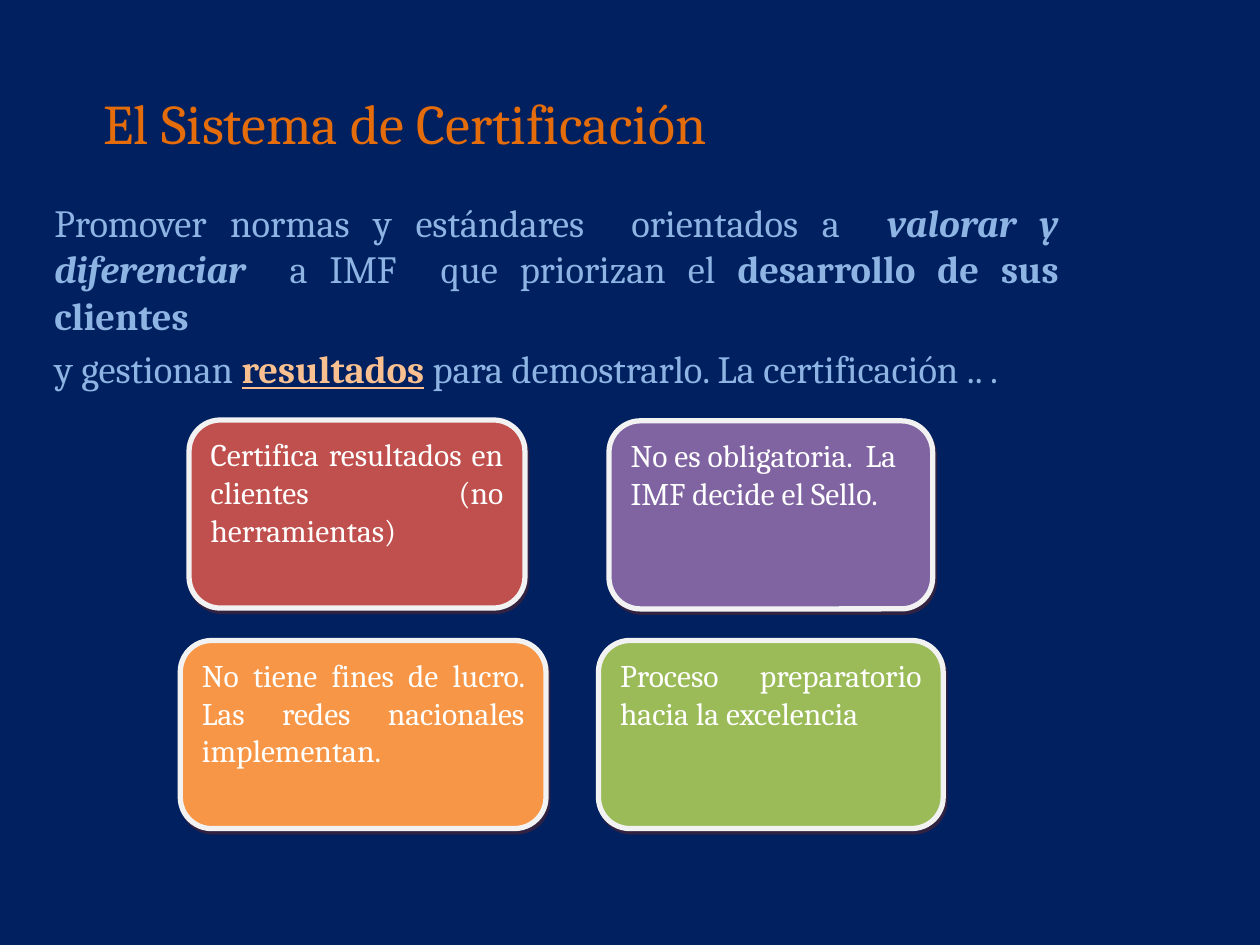
from lxml import etree
from pptx import Presentation
from pptx.dml.color import RGBColor
from pptx.enum import shapes, text
from pptx.oxml import ns
from pptx.util import Pt

FONT = "Cambria"
BLUE, PEACH, WHITE = "8EB4E3", "FAC090", "FFFFFF"
TITLE = [[("El Sistema de Certificación", "E46C0A", "")]]
BODY = [
    [("Promover normas y estándares  orientados a  ", BLUE, ""),
     ("valorar y diferenciar ", BLUE, "bi"),
     (" a IMF  que priorizan el ", BLUE, ""),
     ("desarrollo de sus clientes", BLUE, "b")],
    [("y gestionan ", BLUE, ""),
     ("resultados", PEACH, "bu"),
     (" para demostrarlo. La certificación .. .", BLUE, "")],
]
LEFT, JUST = text.PP_ALIGN.LEFT, text.PP_ALIGN.JUSTIFY
CARDS = [
    ("Certifica resultados en clientes (no herramientas)", "C0504D", JUST, 108, 240, 192),
    ("No es obligatoria.  La IMF decide el Sello.", "8064A2", LEFT, 348, 240.5, 185),
    ("Proceso preparatorio hacia la excelencia", "9BBB59", JUST, 342, 366, 197),
    ("No tiene fines de lucro. Las redes nacionales implementan.", "F79646", JUST, 103, 366, 209),
]
TALL = 107.5


def rgb(code):
    return RGBColor.from_string(code)


def style(run, size, color, marks=""):
    font = run.font
    font.name, font.size = FONT, Pt(size)
    font.color.rgb = rgb(color)
    font.bold, font.italic, font.underline = "b" in marks, "i" in marks, "u" in marks


def write(slide, paras, box, size, align):
    frame = slide.shapes.add_textbox(*map(Pt, box)).text_frame
    frame.word_wrap = True
    frame.vertical_anchor = text.MSO_ANCHOR.BOTTOM
    frame.margin_top = frame.margin_bottom = Pt(7.2)
    for i, parts in enumerate(paras):
        para = frame.add_paragraph() if i else frame.paragraphs[0]
        para.alignment = align
        para.space_before = Pt(size * 0.2)
        for words, color, marks in parts:
            run = para.add_run()
            run.text = words
            style(run, size, color, marks)


def shade(shape):
    shape.shadow.inherit = False
    effects = shape._element.spPr.find(ns.qn("a:effectLst"))
    outer = etree.SubElement(effects, ns.qn("a:outerShdw"), dist=str(Pt(2.2)),
                             dir=str(63 * 60000), rotWithShape="0")
    color = etree.SubElement(outer, ns.qn("a:srgbClr"), val="622423")
    etree.SubElement(color, ns.qn("a:alpha"), val="50000")


def card(slide, words, fill, align, left, top, wide):
    shape = slide.shapes.add_shape(shapes.MSO_SHAPE.ROUNDED_RECTANGLE,
                                   Pt(left), Pt(top), Pt(wide), Pt(TALL))
    shape.fill.solid()
    shape.fill.fore_color.rgb = rgb(fill)
    shape.line.color.rgb = rgb("F2F2F2")
    shape.line.width = Pt(3)
    shade(shape)
    frame = shape.text_frame
    frame.word_wrap = True
    frame.vertical_anchor = text.MSO_ANCHOR.TOP
    frame.text = words
    para = frame.paragraphs[0]
    para.alignment = align
    style(para.runs[0], 18, WHITE)


def main():
    deck = Presentation()
    deck.slide_width, deck.slide_height = Pt(720), Pt(540)
    slide = deck.slides.add_slide(deck.slide_layouts[6])
    slide.background.fill.solid()
    slide.background.fill.fore_color.rgb = rgb("002060")
    write(slide, TITLE, (52, 18, 602, 78), 32, LEFT)
    write(slide, BODY, (24, 108, 588, 123), 22, JUST)
    for item in CARDS:
        card(slide, *item)
    deck.save("out.pptx")


if __name__ == "__main__":
    main()
